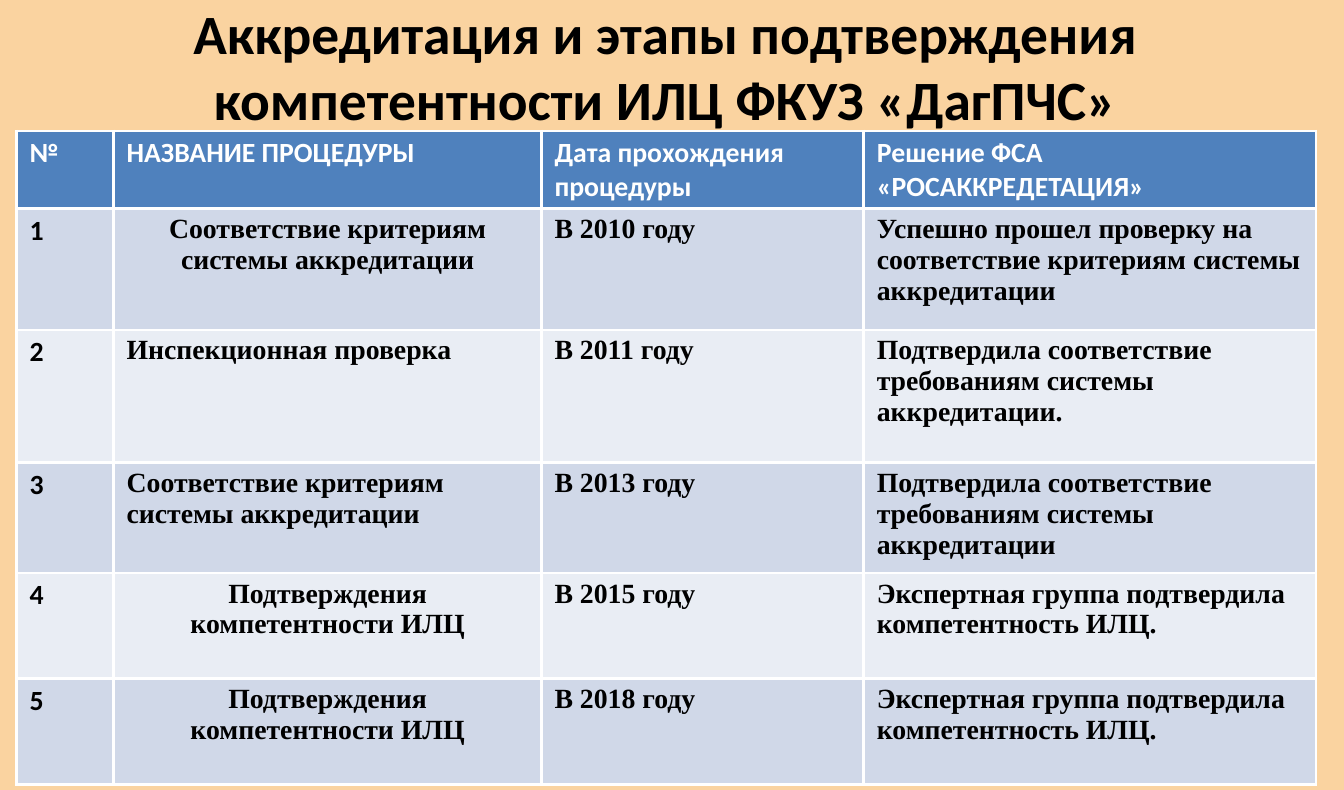
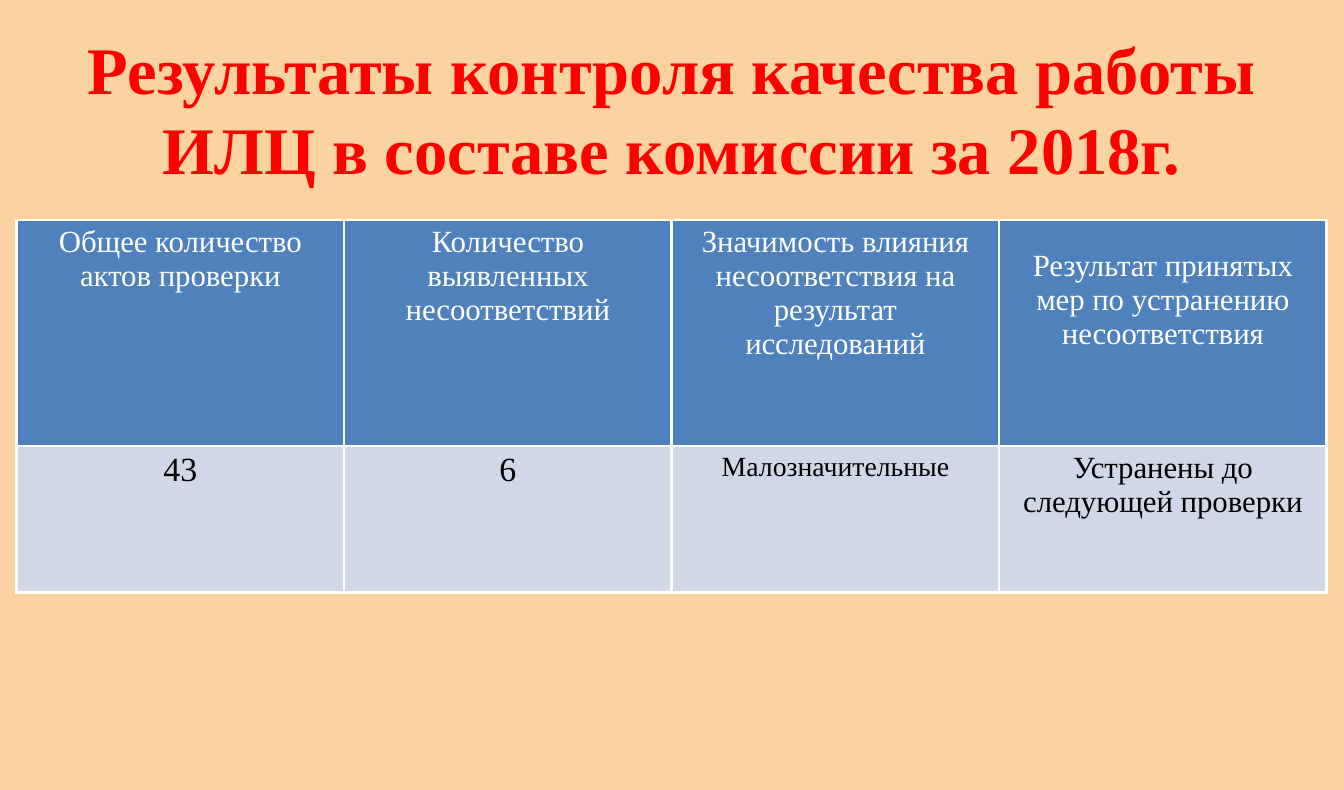
from dataclasses import dataclass

from lxml.etree import SubElement
from pptx import Presentation
from pptx.dml.color import RGBColor as Rgb
from pptx.enum.text import MSO_ANCHOR as Anchor, PP_ALIGN as Align
from pptx.oxml.ns import qn
from pptx.util import Cm, Pt


# Theme shared by both slides
@dataclass(frozen=True)
class Theme:
    background: str = "FAD3A0"
    header: str = "4F81BD"
    bands: tuple = ("D0D8E8", "E9EDF4")
    light: str = "FFFFFF"
    dark: str = "000000"
    accent: str = "FF0000"
    sans: str = "Calibri"
    serif: str = "Times New Roman"
    stage_title: float = 18
    control_title: float = 21.6
    small: float = 9
    medium: float = 10
    large: float = 11
    border: float = 1
    side_margin: float = 0.15
    cell_margin: float = 0.06


THEME = Theme()

# Content: accreditation stages
STAGES_TITLE = "Аккредитация и этапы подтверждения компетентности ИЛЦ ФКУЗ «ДагПЧС»"
STAGES_HEADER = ("№", "НАЗВАНИЕ ПРОЦЕДУРЫ", "Дата прохождения процедуры",
                 "Решение ФСА «РОСАККРЕДЕТАЦИЯ»")
CRITERIA = "Соответствие критериям системы аккредитации"
COMPETENCE = "Подтверждения компетентности ИЛЦ"
EXPERTS = "Экспертная группа подтвердила компетентность ИЛЦ."
CONFIRMED = "Подтвердила соответствие требованиям системы аккредитации"
STAGES = [  # procedure, its alignment, year, decision
    (CRITERIA, Align.CENTER, 2010,
     "Успешно прошел проверку на соответствие критериям системы аккредитации"),
    ("Инспекционная проверка", Align.LEFT, 2011, CONFIRMED + "."),
    (CRITERIA, Align.LEFT, 2013, CONFIRMED),
    (COMPETENCE, Align.CENTER, 2015, EXPERTS),
    (COMPETENCE, Align.CENTER, 2018, EXPERTS),
]
STAGES_COLUMNS = (1.11, 4.9, 3.69, 5.18)
STAGES_ROWS = (0.89, 1.39, 1.52, 1.21, 1.21, 1.21)

# Content: quality control
CONTROL_TITLE = "Результаты контроля качества работы ИЛЦ в составе комиссии за 2018г."
CONTROL = [  # heading, top margin of heading, result, size of result
    ("Общее количество актов проверки", THEME.cell_margin, "43", THEME.large),
    ("Количество выявленных несоответствий", THEME.cell_margin, "6", THEME.large),
    ("Значимость влияния несоответствия на результат исследований",
     THEME.cell_margin, "Малозначительные", THEME.small),
    ("Результат принятых мер по устранению несоответствия", 0.33,
     "Устранены до следующей проверки", THEME.medium),
]
CONTROL_COLUMNS = (3.75,) * len(CONTROL)
CONTROL_ROWS = (2.59, 1.68)


def write(frame, text, font, size, color, bold, align):
    paragraph = frame.paragraphs[0]
    paragraph.alignment = align
    run = paragraph.add_run()
    run.text = text
    run.font.name = font
    run.font.size = Pt(size)
    run.font.bold = bold
    run.font.color.rgb = Rgb.from_string(color)


def add_title(slide, box, text, font, size, color):
    frame = slide.shapes.add_textbox(*map(Cm, box)).text_frame
    frame.word_wrap = True
    frame.vertical_anchor = Anchor.MIDDLE
    frame.margin_left = frame.margin_right = Cm(THEME.side_margin)
    frame.margin_top = frame.margin_bottom = Cm(0.08)
    write(frame, text, font, size, color, True, Align.CENTER)


def set_borders(cell):
    properties = cell._tc.get_or_add_tcPr()
    for position, side in enumerate(("a:lnL", "a:lnR", "a:lnT", "a:lnB")):
        line = SubElement(properties, qn(side), w=str(Pt(THEME.border)))
        SubElement(SubElement(line, qn("a:solidFill")), qn("a:srgbClr"), val=THEME.light)
        properties.insert(position, line)


def add_grid(slide, left, top, columns, rows):
    """Add a table with header, banded fills, margins and borders."""
    grid = slide.shapes.add_table(len(rows), len(columns), Cm(left), Cm(top),
                                  Cm(sum(columns)), Cm(sum(rows))).table
    for column, width in zip(grid.columns, columns):
        column.width = Cm(width)
    for index, (row, height) in enumerate(zip(grid.rows, rows)):
        row.height = Cm(height)
        fill = THEME.bands[(index - 1) % 2] if index else THEME.header
        for cell in row.cells:
            cell.fill.solid()
            cell.fill.fore_color.rgb = Rgb.from_string(fill)
            cell.margin_left = cell.margin_right = Cm(THEME.side_margin)
            cell.margin_top = cell.margin_bottom = Cm(THEME.cell_margin)
            set_borders(cell)
    return grid


def build_stages(slide):
    add_title(slide, (0.76, 0.1, 13.72, 1.3), STAGES_TITLE,
              THEME.sans, THEME.stage_title, THEME.dark)
    grid = add_grid(slide, 0.19, 1.5, STAGES_COLUMNS, STAGES_ROWS)
    for column, heading in enumerate(STAGES_HEADER):
        write(grid.cell(0, column).text_frame, heading,
              THEME.sans, THEME.small, THEME.light, True, Align.LEFT)
    for number, (procedure, align, year, decision) in enumerate(STAGES, 1):
        entries = ((str(number), THEME.sans, Align.LEFT),
                   (procedure, THEME.serif, align),
                   (f"В {year} году", THEME.serif, Align.LEFT),
                   (decision, THEME.serif, Align.LEFT))
        for column, (text, font, alignment) in enumerate(entries):
            write(grid.cell(number, column).text_frame, text,
                  font, THEME.small, THEME.dark, True, alignment)


def build_control(slide):
    grid = add_grid(slide, 0.19, 2.52, CONTROL_COLUMNS, CONTROL_ROWS)
    for column, (heading, margin, result, size) in enumerate(CONTROL):
        header = grid.cell(0, column)
        header.margin_top = Cm(margin)
        write(header.text_frame, heading,
              THEME.serif, THEME.medium, THEME.light, False, Align.CENTER)
        write(grid.cell(1, column).text_frame, result,
              THEME.serif, size, THEME.dark, False, Align.CENTER)
    add_title(slide, (0.76, 0.36, 13.87, 1.75), CONTROL_TITLE,
              THEME.serif, THEME.control_title, THEME.accent)


def main():
    deck = Presentation()
    deck.slide_width, deck.slide_height = Cm(15.39), Cm(9.05)
    backdrop = deck.slide_master.background.fill
    backdrop.solid()
    backdrop.fore_color.rgb = Rgb.from_string(THEME.background)
    blank = deck.slide_layouts[6]
    for build in (build_stages, build_control):
        build(deck.slides.add_slide(blank))
    deck.save("out.pptx")


if __name__ == "__main__":
    main()
